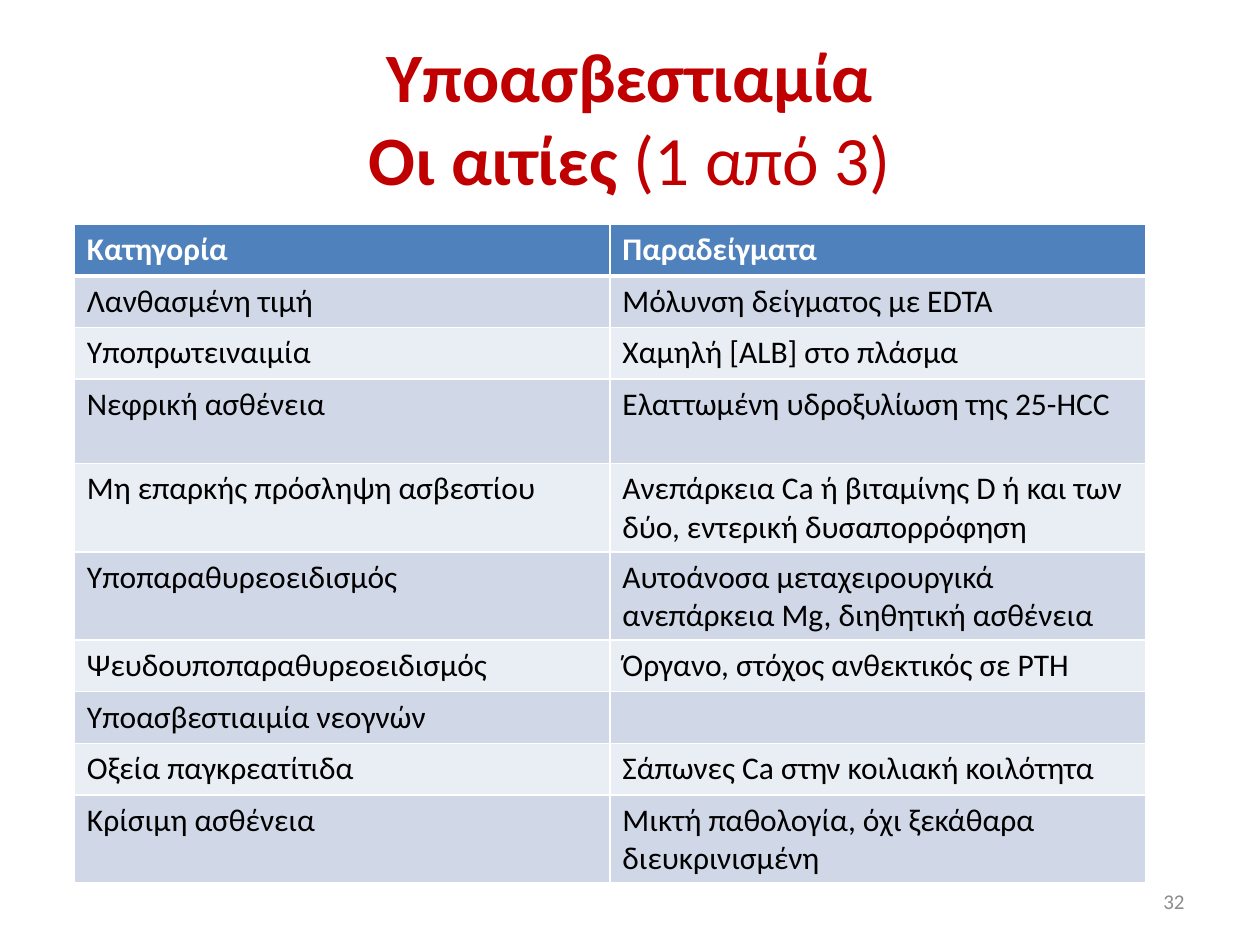
import dataclasses

import lxml.etree
import pptx
import pptx.dml.color
import pptx.enum.text
import pptx.oxml.ns
import pptx.presentation
import pptx.slide
import pptx.table
import pptx.text.text
import pptx.util

GRID_COLUMNS, GRID_ROWS = 120, 90
UNIT = pptx.util.Inches(10) // GRID_COLUMNS
FONT = "Calibri"
RED, GREY, WHITE, BLACK = "C00000", "8C8C8C", "FFFFFF", "000000"
HEADER_BLUE, BAND_FILLS = "4F81BD", ("D0D8E8", "E9EDF4")
THIN, THICK = 1, 3
ROW_HEIGHT, TALL_ROW_HEIGHT = 4.92, 8.04


@dataclasses.dataclass(frozen=True)
class Area:
    """A rectangle in grid columns and rows."""

    column: float
    row: float
    columns: float
    rows: float

    def lengths(self) -> tuple[int, ...]:
        """Return left, top, width and height as slide lengths."""
        return tuple(
            round(value * UNIT)
            for value in (self.column, self.row, self.columns, self.rows)
        )


@dataclasses.dataclass(frozen=True)
class Cause:
    """A category of hypocalcaemia with its examples."""

    category: str
    examples: str
    height: float = ROW_HEIGHT


@dataclasses.dataclass(frozen=True)
class Words:
    """A stretch of text with one weight."""

    text: str
    bold: bool = False


TITLE_AREA = Area(6, 3.6, 108, 15)
NUMBER_AREA = Area(86.04, 83.4, 27.96, 4.8)
TITLE = (Words("Υποασβεστιαμία\vΟι αιτίες ", True), Words("(1 από 3)"))
CAUSES = (
    Cause("Κατηγορία", "Παραδείγματα"),
    Cause("Λανθασμένη τιμή", "Μόλυνση δείγματος με EDTA"),
    Cause("Υποπρωτειναιμία", "Χαμηλή [ALB] στο πλάσμα"),
    Cause("Νεφρική ασθένεια", "Ελαττωμένη υδροξυλίωση της 25-HCC", TALL_ROW_HEIGHT),
    Cause(
        "Μη επαρκής πρόσληψη ασβεστίου",
        "Ανεπάρκεια Ca ή βιταμίνης D ή και των δύο, εντερική δυσαπορρόφηση",
    ),
    Cause(
        "Υποπαραθυρεοειδισμός",
        "Αυτοάνοσα μεταχειρουργικά ανεπάρκεια Mg, διηθητική ασθένεια",
    ),
    Cause("Ψευδουποπαραθυρεοειδισμός", "Όργανο, στόχος ανθεκτικός σε PTH"),
    Cause("Υποασβεστιαιμία νεογνών", ""),
    Cause("Οξεία παγκρεατίτιδα", "Σάπωνες Ca στην κοιλιακή κοιλότητα"),
    Cause("Κρίσιμη ασθένεια", "Μικτή παθολογία, όχι ξεκάθαρα διευκρινισμένη"),
)
TABLE_AREA = Area(7.08, 21.36, 102, sum(cause.height for cause in CAUSES))


def colour(value: str) -> pptx.dml.color.RGBColor:
    """Turn a hex string into a colour."""
    return pptx.dml.color.RGBColor.from_string(value)


def set_font(paragraph: pptx.text.text._Paragraph, size: float, ink: str) -> None:
    """Give a paragraph its typeface, size and colour."""
    paragraph.font.name = FONT
    paragraph.font.size = pptx.util.Pt(size)
    paragraph.font.color.rgb = colour(ink)


def add_text(
    slide: pptx.slide.Slide,
    area: Area,
    phrases: tuple[Words, ...],
    size: float,
    ink: str,
    alignment: pptx.enum.text.PP_ALIGN,
) -> None:
    """Write one vertically centred paragraph in an area."""
    frame = slide.shapes.add_textbox(*area.lengths()).text_frame
    frame.word_wrap = True
    frame.vertical_anchor = pptx.enum.text.MSO_ANCHOR.MIDDLE
    paragraph = frame.paragraphs[0]
    paragraph.alignment = alignment
    set_font(paragraph, size, ink)
    for phrase in phrases:
        for index, line in enumerate(phrase.text.split("\v")):
            if index:
                paragraph.add_line_break()
            run = paragraph.add_run()
            run.text = line
            run.font.bold = phrase.bold


def set_borders(cell: pptx.table._Cell, top: float, bottom: float) -> None:
    """Draw white lines around a cell."""
    properties = cell._tc.get_or_add_tcPr()
    widths = {"a:lnL": THIN, "a:lnR": THIN, "a:lnT": top, "a:lnB": bottom}
    for index, (tag, width) in enumerate(widths.items()):
        line = lxml.etree.Element(
            pptx.oxml.ns.qn(tag), w=str(pptx.util.Pt(width))
        )
        fill = lxml.etree.SubElement(line, pptx.oxml.ns.qn("a:solidFill"))
        lxml.etree.SubElement(fill, pptx.oxml.ns.qn("a:srgbClr"), val=WHITE)
        properties.insert(index, line)


def fill_cell(cell: pptx.table._Cell, text: str, row: int) -> None:
    """Write and style a cell according to its row."""
    is_header = row == 0
    cell.text = text
    paragraph = cell.text_frame.paragraphs[0]
    set_font(paragraph, 18, WHITE if is_header else BLACK)
    paragraph.font.bold = is_header
    cell.fill.solid()
    cell.fill.fore_color.rgb = colour(
        HEADER_BLUE if is_header else BAND_FILLS[(row - 1) % 2]
    )
    set_borders(cell, THICK if row == 1 else THIN, THICK if is_header else THIN)


def add_causes(slide: pptx.slide.Slide) -> None:
    """Add the table of categories and examples."""
    table = slide.shapes.add_table(len(CAUSES), 2, *TABLE_AREA.lengths()).table
    for row, cause in enumerate(CAUSES):
        table.rows[row].height = round(cause.height * UNIT)
        for column, text in enumerate((cause.category, cause.examples)):
            fill_cell(table.cell(row, column), text, row)


def main() -> None:
    """Build and save the slide."""
    presentation = pptx.Presentation()
    presentation.slide_width = GRID_COLUMNS * UNIT
    presentation.slide_height = GRID_ROWS * UNIT
    slide = presentation.slides.add_slide(presentation.slide_layouts[6])
    align = pptx.enum.text.PP_ALIGN
    add_text(slide, TITLE_AREA, TITLE, 39.6, RED, align.CENTER)
    add_causes(slide)
    add_text(slide, NUMBER_AREA, (Words("32"),), 12, GREY, align.RIGHT)
    presentation.save("out.pptx")


if __name__ == "__main__":
    main()
